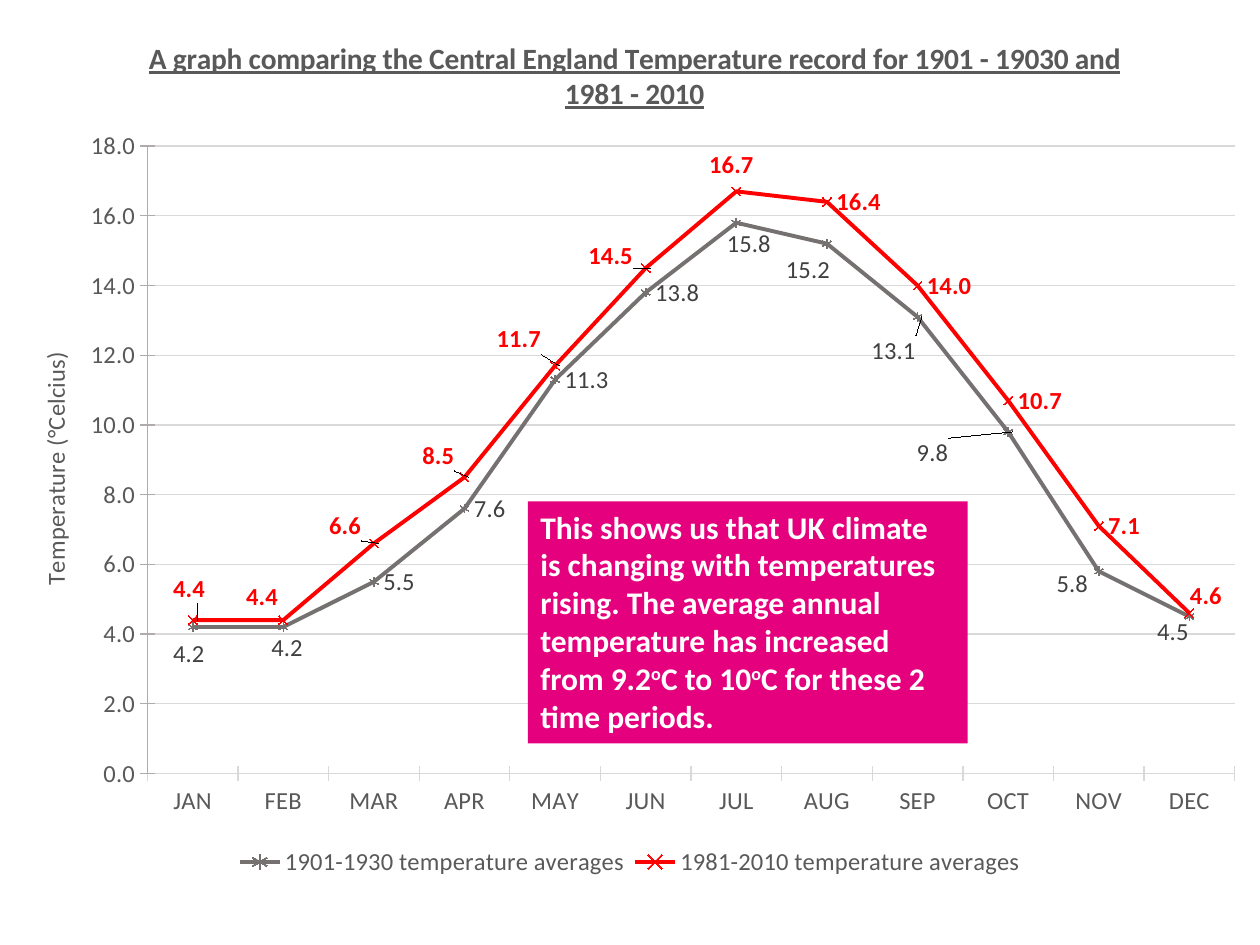
from dataclasses import dataclass, field

from lxml import etree
from pptx import Presentation
from pptx.chart.data import CategoryChartData
from pptx.dml.color import RGBColor
from pptx.enum import chart as ce, shapes, text
from pptx.oxml.ns import qn
from pptx.util import Inches, Pt

FONT = "Calibri"
CHART_WIDTH, CHART_HEIGHT = 10, 7.01
COLOURS = {
    "early": "767171", "late": "FF0000", "early_label": "404040",
    "text": "595959", "grid": "D9D9D9", "axis": "AFABAB",
    "note": "E5007E", "white": "FFFFFF",
}
MONTHS = ["JAN", "FEB", "MAR", "APR", "MAY", "JUN",
          "JUL", "AUG", "SEP", "OCT", "NOV", "DEC"]


@dataclass
class Period:
    name: str
    values: list[float]
    colour: str
    label_colour: str
    marker: ce.XL_MARKER_STYLE
    bold: bool = False
    # month index -> label shift in inches from its place right of the point
    shifts: dict[int, tuple[float, float]] = field(default_factory=dict)


PERIODS = [
    Period("1901-1930 temperature averages",
           [4.2, 4.2, 5.5, 7.6, 11.3, 13.8, 15.8, 15.2, 13.1, 9.8, 5.8, 4.5],
           "early", "early_label", ce.XL_MARKER_STYLE.STAR,
           shifts={0: (-0.23, 0.21), 1: (-0.17, 0.17), 6: (-0.15, 0.17),
                   7: (-0.4, 0.21), 8: (-0.44, 0.27), 9: (-0.8, 0.17),
                   10: (-0.41, 0.1), 11: (-0.33, 0.12)}),
    Period("1981-2010 temperature averages",
           [4.4, 4.4, 6.6, 8.5, 11.7, 14.5, 16.7, 16.4, 14, 10.7, 7.1, 4.6],
           "late", "late", ce.XL_MARKER_STYLE.X, bold=True,
           shifts={0: (-0.23, -0.25), 1: (-0.37, -0.18), 2: (-0.43, -0.14),
                   3: (-0.41, -0.17), 4: (-0.54, -0.21), 5: (-0.53, -0.1),
                   6: (-0.29, -0.21), 11: (-0.07, -0.14)}),
]


def rgb(name: str) -> RGBColor:
    return RGBColor.from_string(COLOURS[name])


def style_font(font, colour: str, size: float = 14, bold: bool = False) -> None:
    font.name, font.size, font.bold = FONT, Pt(size), bold
    font.color.rgb = rgb(colour)


def style_line(line, colour: str, width: float = 0.75) -> None:
    line.color.rgb = rgb(colour)
    line.width = Pt(width)


def place(element, after: str | None, modes: dict[str, str],
          **lengths: float) -> None:
    """Give a chart part a manual layout, with lengths in inches."""
    for old in element.findall(qn("c:layout")):
        element.remove(old)
    layout = etree.Element(qn("c:layout"))
    manual = etree.SubElement(layout, qn("c:manualLayout"))
    for tag, value in modes.items():
        etree.SubElement(manual, qn(f"c:{tag}")).set("val", value)
    for tag, inches in lengths.items():
        total = CHART_WIDTH if tag in "xw" else CHART_HEIGHT
        etree.SubElement(manual, qn(f"c:{tag}")).set("val", f"{inches / total:.5f}")
    if after is None:
        element.insert(0, layout)
    else:
        element.find(qn(after)).addnext(layout)


EDGE = {"xMode": "edge", "yMode": "edge"}


def add_title(title, wording: str, x: float, y: float, size: float = 14,
              bold: bool = False, underline: bool = False) -> None:
    run = title.text_frame.paragraphs[0].add_run()
    run.text = wording
    style_font(run.font, "text", size, bold)
    run.font.underline = underline
    place(title.element if hasattr(title, "element") else title._element,
          "c:tx", EDGE, x=x, y=y)


def style_series(series, period: Period) -> None:
    series.smooth = False
    style_line(series.format.line, period.colour, 2.25)
    series.marker.style = period.marker
    series.marker.size = 5
    series.marker.format.fill.background()
    style_line(series.marker.format.line, period.colour)

    labels = series.data_labels
    labels.show_value = True
    labels.number_format, labels.number_format_is_linked = "0.0", False
    labels.position = ce.XL_LABEL_POSITION.RIGHT
    style_font(labels.font, period.label_colour, bold=period.bold)
    for month in period.shifts:
        label = series.points[month].data_label
        style_font(label.font, period.label_colour, bold=period.bold)
        label.position = ce.XL_LABEL_POSITION.RIGHT
    for element in labels._element.findall(qn("c:dLbl")):
        x, y = period.shifts[int(element.find(qn("c:idx")).get("val"))]
        place(element, "c:idx", {}, x=x, y=y)


def add_temperature_chart(slide) -> None:
    data = CategoryChartData(number_format="0.0")
    data.categories = MONTHS
    for period in PERIODS:
        data.add_series(period.name, period.values)
    chart = slide.shapes.add_chart(
        ce.XL_CHART_TYPE.LINE_MARKERS, 0, 0,
        Inches(CHART_WIDTH), Inches(CHART_HEIGHT), data).chart
    chart.font.name, chart.font.size = FONT, Pt(14)
    plot = chart.plots[0]
    plot.vary_by_categories = False
    for series, period in zip(plot.series, PERIODS):
        style_series(series, period)

    # Axes
    months, degrees = chart.category_axis, chart.value_axis
    for axis, colour in ((months, "grid"), (degrees, "axis")):
        axis.major_tick_mark = ce.XL_TICK_MARK.CROSS
        axis.minor_tick_mark = ce.XL_TICK_MARK.NONE
        style_font(axis.tick_labels.font, "text")
        style_line(axis.format.line, colour)
    degrees.minimum_scale, degrees.maximum_scale, degrees.major_unit = 0, 18, 2
    degrees.tick_labels.number_format = "0.0"
    degrees.tick_labels.number_format_is_linked = False
    style_line(degrees.major_gridlines.format.line, "grid")

    # Titles and legend
    add_title(chart.chart_title,
              "A graph comparing the Central England Temperature record "
              "for 1901 - 19030 and 1981 - 2010",
              1.14, 0.26, 16.8, bold=True, underline=True)
    add_title(degrees.axis_title, "Temperature (°Celcius)", 0.27, 2.76)
    chart.has_legend = True
    legend = chart.legend
    legend.position = ce.XL_LEGEND_POSITION.BOTTOM
    legend.include_in_layout = False
    style_font(legend.font, "text")
    place(legend._element, "c:legendPos", EDGE, x=1.82, y=6.67, w=6.36, h=0.34)
    place(plot._element.getparent(), None, {"layoutTarget": "inner", **EDGE},
          x=1.17, y=1.16, w=8.63, h=4.98)


def add_note(slide) -> None:
    note = slide.shapes.add_shape(
        shapes.MSO_SHAPE.RECTANGLE,
        Inches(4.19), Inches(3.98), Inches(3.49), Inches(1.92))
    note.shadow.inherit = False
    note.fill.solid()
    note.fill.fore_color.rgb = rgb("note")
    note.line.fill.background()
    frame = note.text_frame
    frame.word_wrap = True
    frame.vertical_anchor = text.MSO_ANCHOR.TOP
    paragraph = frame.paragraphs[0]
    paragraph.alignment = text.PP_ALIGN.LEFT
    parts = ("This shows us that UK climate is changing with temperatures rising. "
             "The average annual temperature has increased from 9.2",
             "o", "C to 10", "o", "C for these 2 time periods.")
    for part in parts:
        run = paragraph.add_run()
        run.text = part
        style_font(run.font, "white", 18, bold=True)
        if part == "o":  # raised degree sign
            run.font._element.set("baseline", "30000")


def main() -> None:
    presentation = Presentation()
    presentation.slide_width, presentation.slide_height = Inches(10), Inches(7.5)
    slide = presentation.slides.add_slide(presentation.slide_layouts[6])
    add_temperature_chart(slide)
    add_note(slide)
    presentation.save("out.pptx")


if __name__ == "__main__":
    main()
